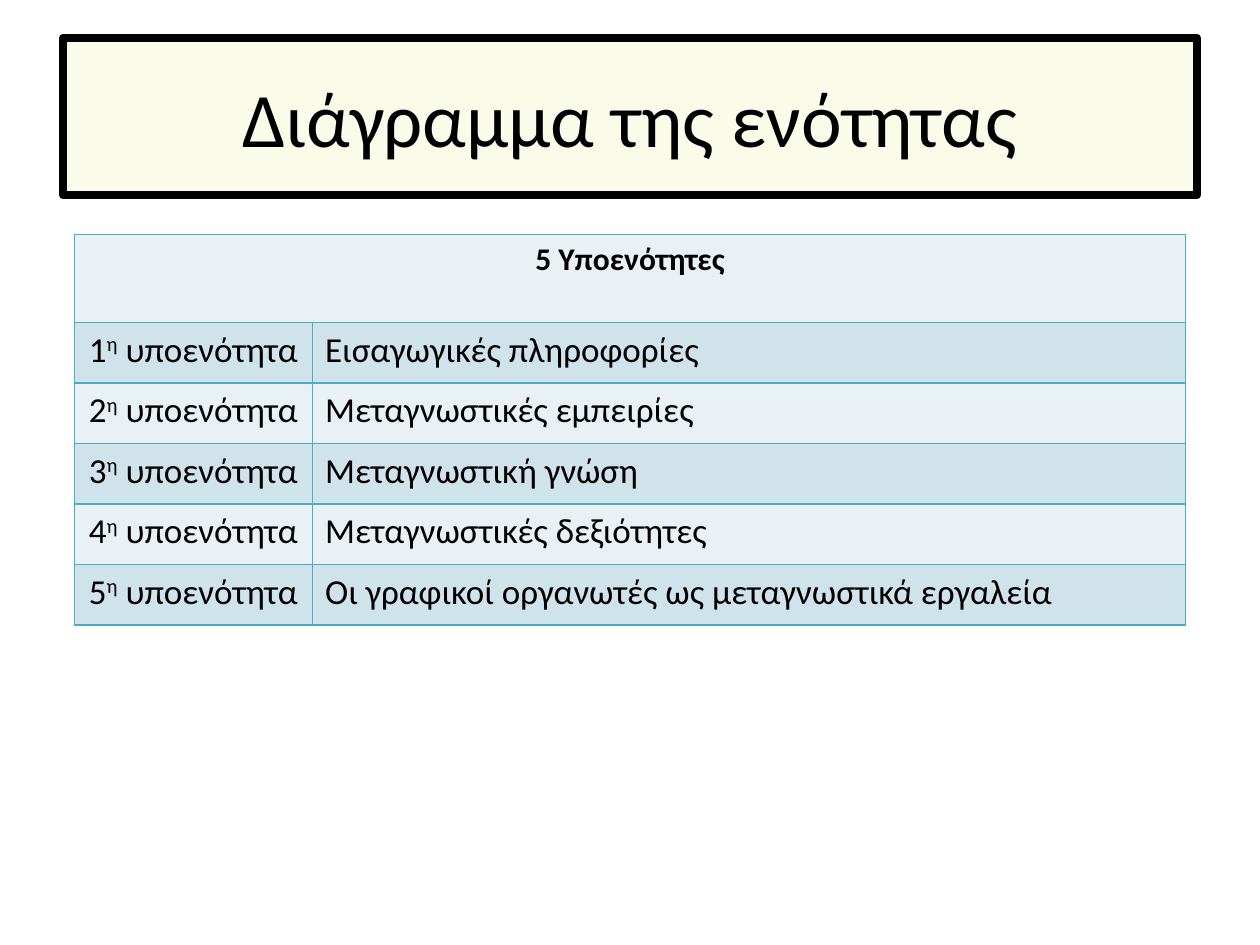
from dataclasses import dataclass

from lxml.etree import SubElement
from pptx import Presentation
from pptx.dml.color import RGBColor
from pptx.enum.text import MSO_ANCHOR, PP_ALIGN
from pptx.oxml.ns import qn
from pptx.util import Inches, Pt


@dataclass(frozen=True)
class Theme:
    font: str = "Calibri"
    ink: str = "000000"
    cream: str = "FBFBE9"
    edge: str = "4BACC6"
    bands: tuple = ("E9F1F5", "D0E3EA")
    title: int = 44
    head: int = 18
    body: int = 20


THEME = Theme()
UNITS = [
    "Εισαγωγικές πληροφορίες",
    "Μεταγνωστικές εμπειρίες",
    "Μεταγνωστική γνώση",
    "Μεταγνωστικές δεξιότητες",
    "Οι γραφικοί οργανωτές ως μεταγνωστικά εργαλεία",
]


def color(code):
    return RGBColor.from_string(code)


def write(frame, text, size, align=PP_ALIGN.CENTER, bold=False):
    """Fill a frame; parts of the text between ^ marks are raised."""
    para = frame.paragraphs[0]
    para.alignment = align
    for i, part in enumerate(text.split("^")):
        run = para.add_run()
        run.text = part
        font = run.font
        font.name, font.size, font.bold = THEME.font, Pt(size), bold
        font.color.rgb = color(THEME.ink)
        if i % 2:
            run._r.get_or_add_rPr().set("baseline", "30000")


def paint(cell, fill):
    """Give a cell its borders, then its fill."""
    props = cell._tc.get_or_add_tcPr()
    for side in ("lnL", "lnR", "lnT", "lnB"):
        line = SubElement(props, qn(f"a:{side}"), w=str(Pt(1)))
        solid = SubElement(line, qn("a:solidFill"))
        SubElement(solid, qn("a:srgbClr"), val=THEME.edge)
    cell.fill.solid()
    cell.fill.fore_color.rgb = color(fill)


def add_title(slide, text, left, top, width, height):
    shape = slide.shapes.title
    shape.left, shape.top = Inches(left), Inches(top)
    shape.width, shape.height = Inches(width), Inches(height)
    shape.fill.solid()
    shape.fill.fore_color.rgb = color(THEME.cream)
    shape.line.color.rgb = color(THEME.ink)
    shape.line.width = Pt(4.5)
    SubElement(shape.line._get_or_add_ln(), qn("a:round"))
    shape.text_frame.vertical_anchor = MSO_ANCHOR.MIDDLE
    write(shape.text_frame, text, THEME.title)


def add_units(slide, head, units, left, top, width, height):
    first, tall = 1.89, 0.7
    table = slide.shapes.add_table(
        len(units) + 1, 2, Inches(left), Inches(top), Inches(width), Inches(height)
    ).table

    # Column and row sizes
    table.columns[0].width = Inches(first)
    table.columns[1].width = Inches(width - first)
    for i, row in enumerate(table.rows):
        row.height = Inches((height - tall) / len(units) if i else tall)
        for cell in row.cells:
            paint(cell, THEME.bands[i % 2])

    # Heading across both columns
    table.cell(0, 0).merge(table.cell(0, 1))
    write(table.cell(0, 0).text_frame, head, THEME.head, bold=True)

    # One row for each unit
    for i, unit in enumerate(units, 1):
        write(table.cell(i, 0).text_frame, f"{i}^η^ υποενότητα", THEME.body)
        write(table.cell(i, 1).text_frame, unit, THEME.body, align=PP_ALIGN.JUSTIFY)


def main():
    deck = Presentation()
    deck.slide_width, deck.slide_height = Inches(10), Inches(7.5)
    slide = deck.slides.add_slide(deck.slide_layouts[5])
    add_title(slide, "Διάγραμμα της ενότητας", 0.5, 0.3, 9, 1.25)
    add_units(slide, "5 Υποενότητες", UNITS, 0.59, 1.86, 8.82, 3.1)
    deck.save("out.pptx")


if __name__ == "__main__":
    main()
